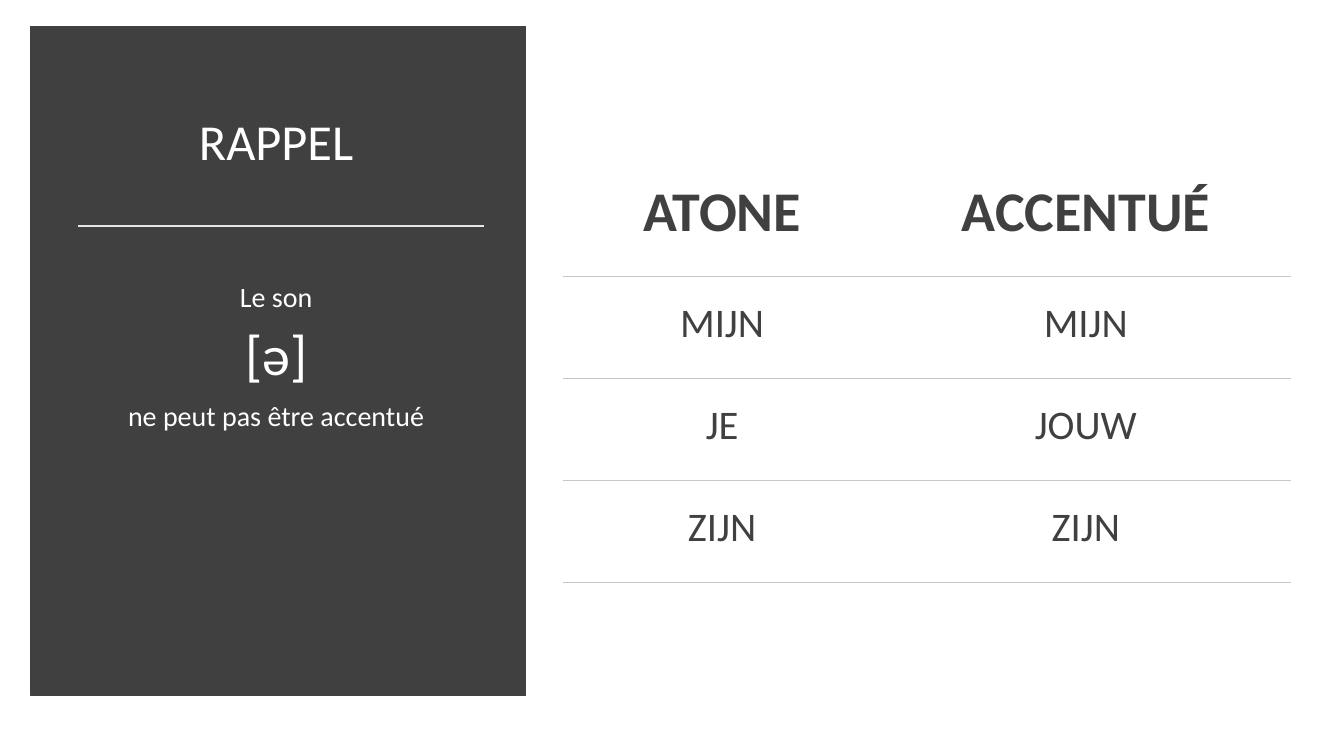
import pptx
import pptx.dml.color
import pptx.enum.shapes
import pptx.enum.text
import pptx.oxml
import pptx.oxml.ns
import pptx.util

Cm, Pt = pptx.util.Cm, pptx.util.Pt
RGB = pptx.dml.color.RGBColor.from_string
ANCHOR = pptx.enum.text.MSO_ANCHOR

COLORS = {
    "dark": "404040",
    "white": "FFFFFF",
    "divider": "E7E6E6",
    "rule": "C7C6C1",
}
ROWS = [("ATONE", "ACCENTUÉ"), ("MIJN", "MIJN"), ("JE", "JOUW"), ("ZIJN", "ZIJN")]


def write(p, text, size, color, bold=False, spacing=1.0, before=0):
    p.alignment = pptx.enum.text.PP_ALIGN.CENTER
    p.line_spacing = spacing
    p.space_before = Pt(before)
    r = p.add_run()
    r.text = text
    r.font.name = "Calibri"
    r.font.size = Pt(size)
    r.font.bold = bold
    r.font.color.rgb = RGB(COLORS[color])


def add_border(cell, side):
    """Rule one edge of a table cell; side is T or B."""
    cell._tc.get_or_add_tcPr().insert(0, pptx.oxml.parse_xml(
        f'<a:ln{side} {pptx.oxml.ns.nsdecls("a")} w="9525"><a:solidFill>'
        f'<a:srgbClr val="{COLORS["rule"]}"/></a:solidFill></a:ln{side}>'))


prs = pptx.Presentation()
prs.slide_width, prs.slide_height = Cm(33.87), Cm(19.05)
s = prs.slides.add_slide(prs.slide_layouts[5])

# Dark panel, placed behind the title
panel = s.shapes.add_shape(pptx.enum.shapes.MSO_SHAPE.RECTANGLE,
                           Cm(0.77), Cm(0.67), Cm(12.48), Cm(16.85))
panel.shadow.inherit = False
panel.fill.solid()
panel.fill.fore_color.rgb = RGB(COLORS["dark"])
panel.line.color.rgb = RGB(COLORS["dark"])
panel.line.width = Pt(1)

title = s.shapes.title
panel._element.addnext(title._element)
title.left, title.top, title.width, title.height = Cm(1.65), Cm(1.78), Cm(10.62), Cm(3.73)
title.text_frame.auto_size = pptx.enum.text.MSO_AUTO_SIZE.NONE
title.text_frame.vertical_anchor = ANCHOR.MIDDLE
write(title.text_frame.paragraphs[0], "RAPPEL", 36, "white", spacing=0.9)

divider = s.shapes.add_connector(pptx.enum.shapes.MSO_CONNECTOR.STRAIGHT,
                                 Cm(1.97), Cm(5.7), Cm(12.2), Cm(5.7))
divider.line.color.rgb = RGB(COLORS["divider"])
divider.line.width = Pt(1.75)
divider._element.spPr.append(
    pptx.oxml.parse_xml(f'<a:effectLst {pptx.oxml.ns.nsdecls("a")}/>'))

# Reminder text
tf = s.shapes.add_textbox(Cm(1.65), Cm(5.89), Cm(10.62), Cm(10.49)).text_frame
tf.word_wrap = True
tf.margin_top = Cm(1.25)
reminder = [("Le son", 20, 0), ("[ə]", 40, 10), ("ne peut pas être accentué", 20, 10)]
for i, (text, size, before) in enumerate(reminder):
    p = tf.add_paragraph() if i else tf.paragraphs[0]
    write(p, text, size, "white", spacing=0.9, before=before)

# Unstressed and stressed forms
table = s.shapes.add_table(len(ROWS), 2, Cm(14.2), Cm(3.94), Cm(18.33), Cm(10.74)).table
table.first_row = table.horz_banding = False
for column, width in zip(table.columns, (7.97, 10.5)):
    column.width = Cm(width)
table.columns[0].width, table.columns[1].width = Cm(7.72), Cm(10.61)
for i, words in enumerate(ROWS):
    header = i == 0
    table.rows[i].height = Cm(3.03 if header else 2.57)
    for j, word in enumerate(words):
        cell = table.cell(i, j)
        cell.margin_left, cell.margin_right = Cm(1.12), Cm(0.84)
        cell.margin_top = cell.margin_bottom = Cm(0.56)
        cell.vertical_anchor = ANCHOR.TOP
        cell.fill.background()
        add_border(cell, "B")
        if not header:
            add_border(cell, "T")
        write(cell.text_frame.paragraphs[0], word, 40 if header else 29, "dark", bold=header)

prs.save("out.pptx")
